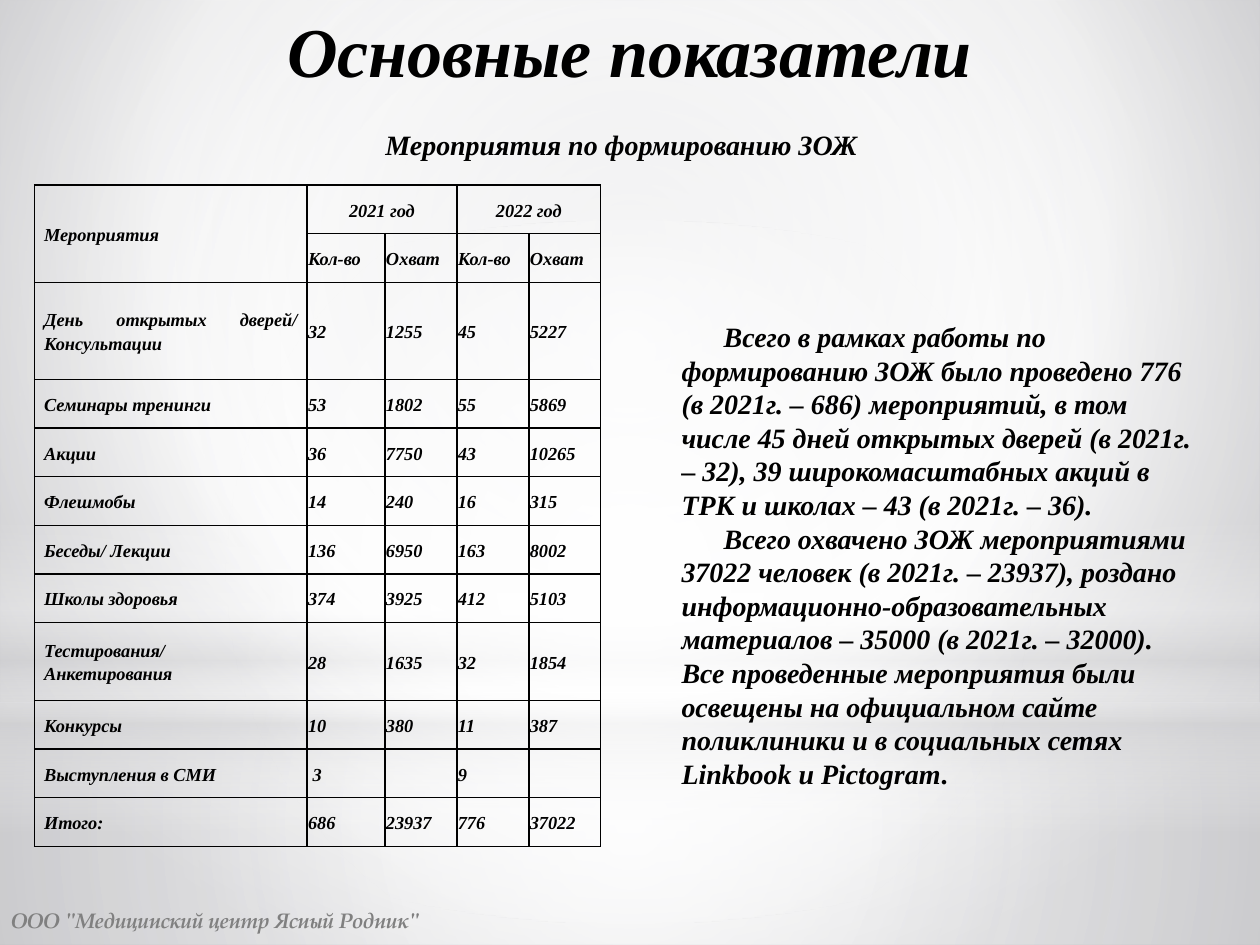
from lxml import etree
from pptx import Presentation
from pptx import util as u
from pptx.dml.color import RGBColor
from pptx.enum import shapes, text
from pptx.oxml import ns, parse_xml

SERIF = "Times New Roman"
CENTER = '<a:path path="circle"><a:fillToRect l="50000" t="50000" r="50000" b="50000"/></a:path>'
UPPER = '<a:path path="circle"><a:fillToRect l="20000" t="10000" r="20000" b="60000"/></a:path>'
DOWN = '<a:lin ang="5400000" scaled="0"/>'


def set_gradient(fill, root, stops, direction):
    """Swap the default gradient for stops of (position, colour, opacity)."""
    fill.gradient()
    old = next(root.iter(ns.qn("a:gradFill")))
    stop_xml = "".join(
        f'<a:gs pos="{place * 1000}"><a:srgbClr val="{color}">'
        f'<a:alpha val="{opacity * 1000}"/></a:srgbClr></a:gs>'
        for place, color, opacity in stops)
    new = parse_xml(f'<a:gradFill {ns.nsdecls("a")} rotWithShape="1">'
                    f'<a:gsLst>{stop_xml}</a:gsLst>{direction}</a:gradFill>')
    old.getparent().replace(old, new)


def format_runs(para, size, color="000000", font=SERIF):
    for span in para.runs:
        span.font.size = u.Pt(size)
        span.font.name = font
        span.font.bold = span.font.italic = True
        span.font.color.rgb = RGBColor.from_string(color)


deck = Presentation()
deck.slide_width, deck.slide_height = u.Cm(25.4), u.Cm(19.05)
page = deck.slides.add_slide(deck.slide_layouts[6])

# Background
set_gradient(page.background.fill, page.element,
             [(0, "CBCBCE", 100), (60, "FFFFFF", 100), (100, "A9A9AE", 100)], UPPER)

# Soft light layers: shape, top, height, stops, direction
RECT, OVAL = shapes.MSO_SHAPE.RECTANGLE, shapes.MSO_SHAPE.OVAL
layers = [
    (RECT, 14.17, 4.88, [(0, "FFFFFF", 91), (37, "FFFFFF", 76), (100, "D4D4D6", 79)], CENTER),
    (RECT, 0, 14.17, [(0, "FFFFFF", 89), (48, "FFFFFF", 62), (100, "D4D4D6", 79)], CENTER),
    (RECT, 10.46, 6.35, [(0, "FFFFFF", 0), (29, "FFFFFF", 30), (45, "D4D4D6", 40),
                         (55, "FFFFFF", 26), (65, "D4D4D6", 60), (100, "FFFFFF", 0)], DOWN),
    (OVAL, 4.45, 14.17, [(0, "FFFFFF", 100), (56, "FFFFFF", 0)], CENTER),
]
for kind, top, height, stops, direction in layers:
    layer = page.shapes.add_shape(kind, 0, u.Cm(top), deck.slide_width, u.Cm(height))
    layer.shadow.inherit = False
    layer.line.fill.background()
    set_gradient(layer.fill, layer.element, stops, direction)

# Footer, title and subtitle: wording, place, size, colour, font, alignment, spacing, anchor
LEFT, MIDDLE = text.PP_ALIGN.LEFT, text.MSO_ANCHOR.MIDDLE
MID_ALIGN, TOP = text.PP_ALIGN.CENTER, text.MSO_ANCHOR.TOP
captions = [
    ('ООО "Медицинский центр Ясный Родник"', (-0.03, 18.03, 9.32, 1.02),
     12, "808080", "TeX Gyre Pagella", LEFT, 1, MIDDLE),
    ("Основные показатели", (0.03, 0.03, 25.32, 1.9),
     40, "000000", SERIF, MID_ALIGN, 1, TOP),
    ("Мероприятия по формированию ЗОЖ", (7.49, 2.34, 10.08, 1.04),
     16, "000000", SERIF, MID_ALIGN, 1.15, TOP),
]
for wording, place, size, color, font, align, spacing, anchor in captions:
    box = page.shapes.add_textbox(*map(u.Cm, place))
    box.text_frame.word_wrap = True
    box.text_frame.vertical_anchor = anchor
    box.text_frame.text = wording
    para = box.text_frame.paragraphs[0]
    para.alignment, para.line_spacing = align, spacing
    format_runs(para, size, color, font)

# Summary
summary = [
    "Всего в рамках работы по формированию ЗОЖ было проведено 776 (в 2021г. – 686) "
    "мероприятий, в том числе 45 дней открытых дверей (в 2021г. – 32), 39 широкомасштабных "
    "акций в ТРК и школах – 43 (в 2021г. – 36).",
    "Всего охвачено ЗОЖ мероприятиями 37022 человек (в 2021г. – 23937), роздано "
    "информационно-образовательных материалов – 35000 (в 2021г. – 32000). Все проведенные "
    "мероприятия были освещены на официальном сайте поликлиники и в социальных сетях "
    "Linkbook и Pictogram",
]
box = page.shapes.add_textbox(u.Cm(13.49), u.Cm(6.32), u.Cm(11), u.Cm(9.83))
box.text_frame.word_wrap = True
box.text_frame.text = "\n".join(summary)
full_stop = box.text_frame.paragraphs[-1].add_run()
full_stop.text = "."
for para in box.text_frame.paragraphs:
    para._p.get_or_add_pPr().set("indent", str(u.Cm(0.85)))
    format_runs(para, 16)
full_stop.font.italic = False

# Table of events
rows = [
    ("Мероприятия", "2021 год", "", "2022 год", ""),
    ("", "Кол-во", "Охват", "Кол-во", "Охват"),
    ("День открытых дверей/ Консультации", "32", "1255", "45", "5227"),
    ("Семинары тренинги", "53", "1802", "55", "5869"),
    ("Акции", "36", "7750", "43", "10265"),
    ("Флешмобы", "14", "240", "16", "315"),
    ("Беседы/ Лекции", "136", "6950", "163", "8002"),
    ("Школы здоровья", "374", "3925", "412", "5103"),
    ("Тестирования/ Анкетирования", "28", "1635", "32", "1854"),
    ("Конкурсы", "10", "380", "11", "387"),
    ("Выступления в СМИ", " 3", "", "9", ""),
    ("Итого:", "686", "23937", "776", "37022"),
]
widths = [5.49, 1.57, 1.45, 1.45, 1.45]
heights = [0.98] * len(rows)
heights[2], heights[8] = 1.96, 1.57
table = page.shapes.add_table(len(rows), len(widths), u.Cm(0.7), u.Cm(3.73),
                              u.Cm(sum(widths)), u.Cm(sum(heights))).table
table.first_row = table.horz_banding = False
for column, width in zip(table.columns, widths):
    column.width = u.Cm(width)
for row, height in zip(table.rows, heights):
    row.height = u.Cm(height)

for r, values in enumerate(rows):
    for c, value in enumerate(values):
        cell = table.cell(r, c)
        cell.margin_left = cell.margin_right = u.Cm(0.02 if c else 0.19)
        cell.margin_top = cell.margin_bottom = 0
        cell.vertical_anchor = MIDDLE
        cell.text = value
        para = cell.text_frame.paragraphs[0]
        para.line_spacing = 1.15
        para.alignment = text.PP_ALIGN.JUSTIFY
        if c and r < 2:
            para.alignment = (MID_ALIGN, LEFT)[r]
        format_runs(para, 10.5)
        # Borders come before the fill in the cell properties
        properties = cell._tc.get_or_add_tcPr()
        for side in ("lnL", "lnR", "lnT", "lnB"):
            border = etree.SubElement(properties, ns.qn(f"a:{side}"), w=str(u.Pt(1)))
            solid = etree.SubElement(border, ns.qn("a:solidFill"))
            etree.SubElement(solid, ns.qn("a:srgbClr"), val="000000")
        cell.fill.background()

# Header spans
for first, last in [((0, 0), (1, 0)), ((0, 1), (0, 2)), ((0, 3), (0, 4))]:
    table.cell(*first).merge(table.cell(*last))

deck.save("out.pptx")
